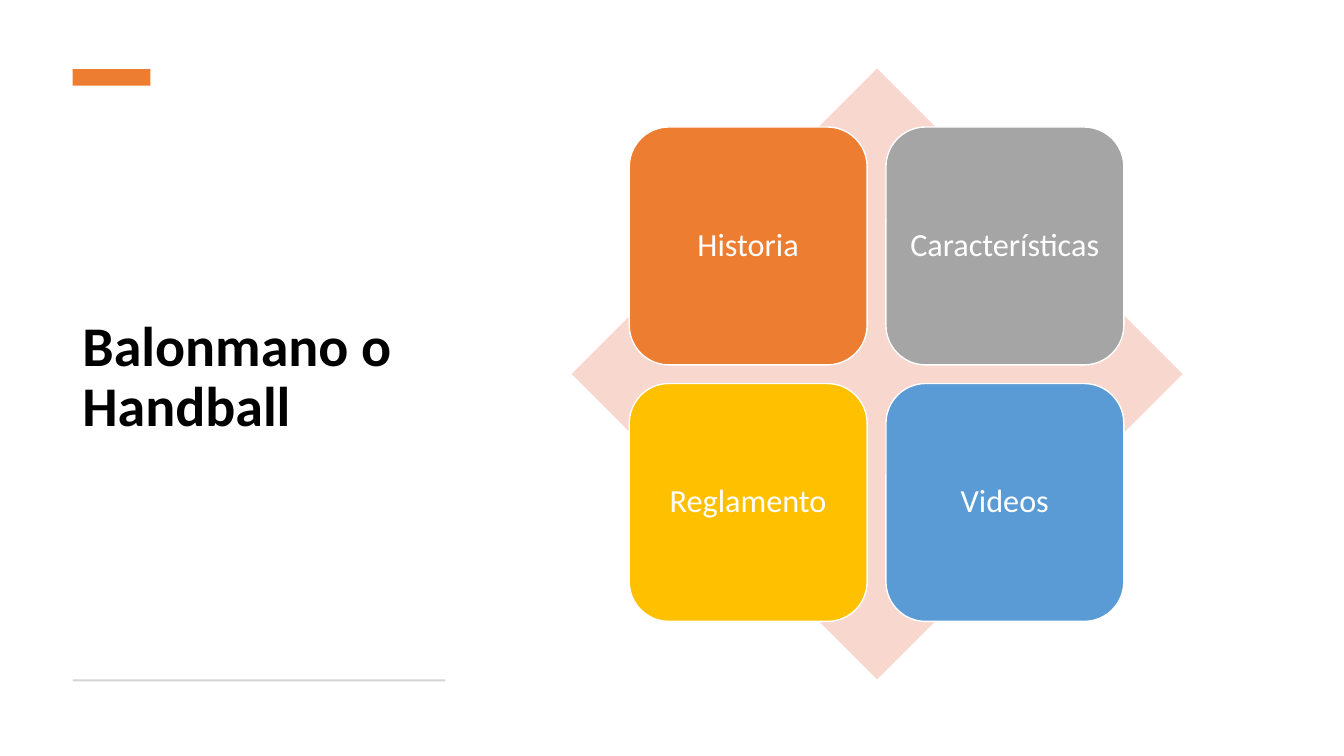
import dataclasses

import pptx
import pptx.dml.color
import pptx.enum.shapes
import pptx.enum.text
import pptx.util

SHAPE = pptx.enum.shapes.MSO_SHAPE
ALIGN = pptx.enum.text.PP_ALIGN


@dataclasses.dataclass(frozen=True)
class Theme:
    font: str = "Calibri"
    title_size: int = 40
    tile_size: int = 23
    line_spacing: float = 0.9
    outline: int = 1
    ink: str = "000000"
    paper: str = "FFFFFF"
    orange: str = "ED7D31"
    gray: str = "A5A5A5"
    gold: str = "FFC000"
    blue: str = "5B9BD5"
    blush: str = "F8D7CE"
    rule: str = "D5D5D5"


class SlideBuilder:
    def __init__(self, deck, theme):
        self.deck = deck
        self.theme = theme
        self.slide = deck.slides.add_slide(deck.slide_layouts[6])

    def across(self, percent):
        return round(self.deck.slide_width * percent / 100)

    def down(self, percent):
        return round(self.deck.slide_height * percent / 100)

    def place(self, left, top, width, height):
        return self.across(left), self.down(top), self.across(width), self.down(height)

    def color(self, code):
        return pptx.dml.color.RGBColor.from_string(code)

    def set_words(self, frame, words, size, color, align, bold=False):
        frame.text = words
        frame.word_wrap = True
        frame.vertical_anchor = pptx.enum.text.MSO_ANCHOR.MIDDLE
        paragraph = frame.paragraphs[0]
        paragraph.alignment = align
        paragraph.line_spacing = self.theme.line_spacing
        font = paragraph.runs[0].font
        font.name = self.theme.font
        font.size = pptx.util.Pt(size)
        font.bold = bold
        font.color.rgb = self.color(color)

    def block(self, kind, box, fill):
        block = self.slide.shapes.add_shape(kind, *self.place(*box))
        block.shadow.inherit = False
        block.fill.solid()
        block.fill.fore_color.rgb = self.color(fill)
        block.line.fill.background()
        return block

    def title(self, words, box):
        heading = self.slide.shapes.add_textbox(*self.place(*box))
        self.set_words(heading.text_frame, words, self.theme.title_size,
                       self.theme.ink, ALIGN.LEFT, bold=True)

    def tile(self, words, box, fill):
        tile = self.block(SHAPE.ROUNDED_RECTANGLE, box, fill)
        tile.line.color.rgb = self.color(self.theme.paper)
        tile.line.width = pptx.util.Pt(self.theme.outline)
        frame = tile.text_frame
        frame.margin_left = frame.margin_right = self.across(0.7)
        frame.margin_top = frame.margin_bottom = self.down(1.25)
        self.set_words(frame, words, self.theme.tile_size, self.theme.paper, ALIGN.CENTER)


def main():
    deck = pptx.Presentation()
    deck.slide_width = pptx.util.Inches(13.33)
    deck.slide_height = pptx.util.Inches(7.5)
    theme = Theme()
    page = SlideBuilder(deck, theme)

    margin, panel_width = 5.4, 27.75
    page.title("Balonmano o Handball", (margin, 14, panel_width, 72.13))
    page.block(SHAPE.RECTANGLE, (margin, 9.13, 5.8, 2.2), theme.orange)
    page.block(SHAPE.RECTANGLE, (margin, 89.87, panel_width, 0.27), theme.rule)
    page.block(SHAPE.DIAMOND, (42.53, 9.07, 45.46, 80.8), theme.blush)

    topics = [
        ("Historia", theme.orange),
        ("Características", theme.gray),
        ("Reglamento", theme.gold),
        ("Videos", theme.blue),
    ]
    for index, (topic, fill) in enumerate(topics):
        row, column = divmod(index, 2)
        page.tile(topic, (46.82 + 19.1 * column, 16.8 + 33.93 * row, 17.7, 31.47), fill)

    deck.save("out.pptx")


if __name__ == "__main__":
    main()
